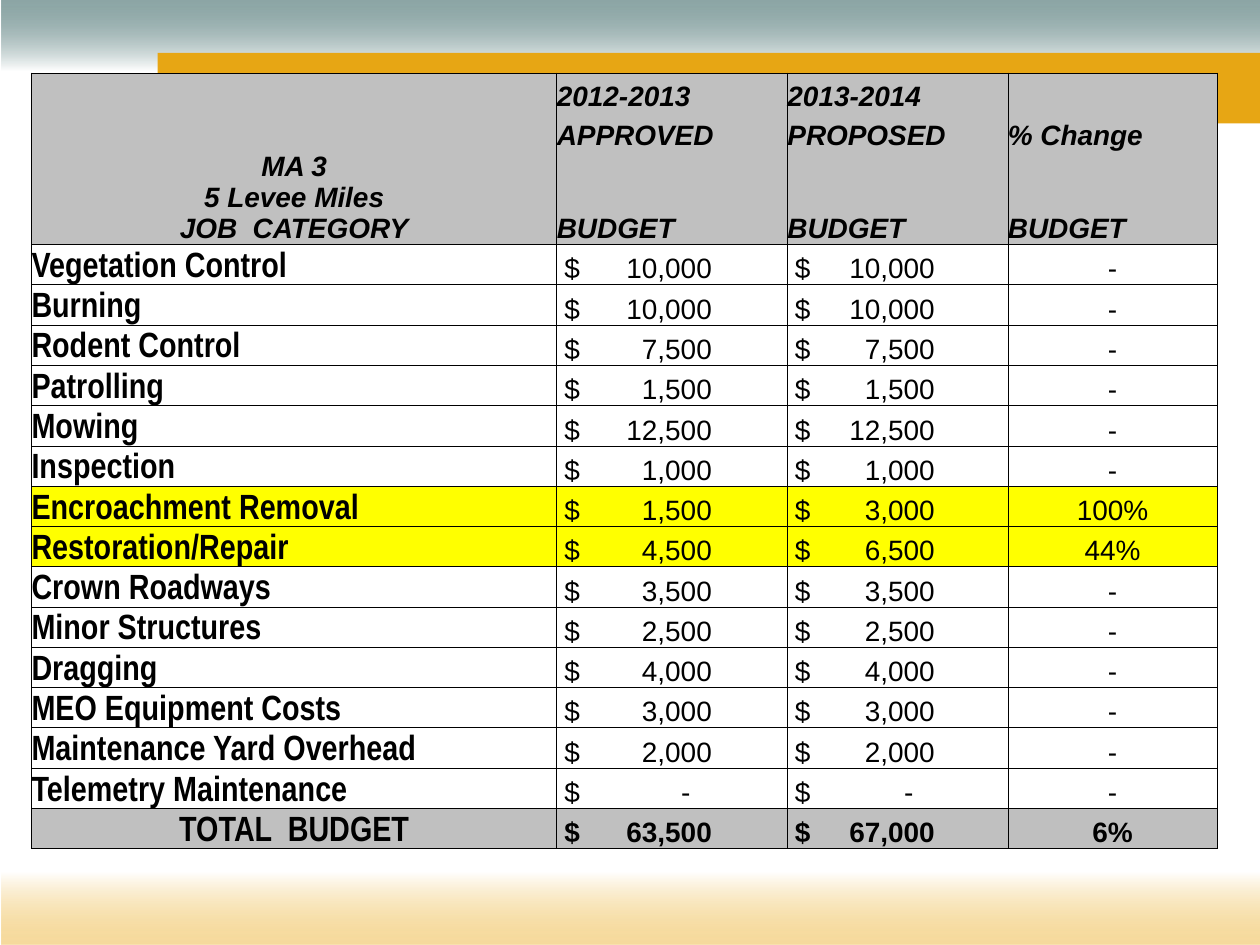
from dataclasses import dataclass

from lxml import etree
from pptx import Presentation
from pptx.dml.color import RGBColor
from pptx.enum.shapes import MSO_SHAPE
from pptx.enum.text import MSO_ANCHOR, PP_ALIGN
from pptx.oxml.ns import qn
from pptx.util import Inches, Pt

RECT = MSO_SHAPE.RECTANGLE
LEFT, CENTER = PP_ALIGN.LEFT, PP_ALIGN.CENTER
BOTTOM = MSO_ANCHOR.BOTTOM


@dataclass(frozen=True)
class Theme:
    teal: str = "215352"
    gold: str = "EEB840"
    orange: str = "E7A614"
    white: str = "FFFFFF"
    black: str = "000000"
    gray: str = "C0C0C0"
    total_gray: str = "BFBFBF"
    yellow: str = "FFFF00"
    font: str = "Arial"
    narrow: str = "Arial Narrow"
    body: int = 16
    label: int = 20
    border: float = 0.5


THEME = Theme()
NO_GRID_STYLE = "{2D5ABB26-0587-4C30-8999-92F81FD0307C}"
COL_WIDTHS = (4.17, 1.83, 1.75, 1.66)
HEADER_HEIGHTS = (0.31, 0.31, 0.74)
ROW_HEIGHT = 0.32
MONEY_INSET = 0.06
AMOUNT_TABS = (1.17, 1.11)
DASH_SHIFT = 0.17

TITLE = ("MA 3", "5 Levee Miles", "JOB  CATEGORY")
HEADERS = (
    ("2012-2013", "2013-2014", ""),
    ("APPROVED", "PROPOSED", "% Change"),
    ("BUDGET", "BUDGET", "BUDGET"),
)
BUDGET = (
    ("Vegetation Control", "10,000", "10,000", "-"),
    ("Burning", "10,000", "10,000", "-"),
    ("Rodent Control", "7,500", "7,500", "-"),
    ("Patrolling", "1,500", "1,500", "-"),
    ("Mowing", "12,500", "12,500", "-"),
    ("Inspection", "1,000", "1,000", "-"),
    ("Encroachment Removal", "1,500", "3,000", "100%"),
    ("Restoration/Repair", "4,500", "6,500", "44%"),
    ("Crown Roadways", "3,500", "3,500", "-"),
    ("Minor Structures", "2,500", "2,500", "-"),
    ("Dragging", "4,000", "4,000", "-"),
    ("MEO Equipment Costs", "3,000", "3,000", "-"),
    ("Maintenance Yard Overhead", "2,000", "2,000", "-"),
    ("Telemetry Maintenance", "-", "-", "-"),
)
TOTAL = ("TOTAL  BUDGET", "63,500", "67,000", "6%")


def add_band(slide, box, color):
    sp = slide.shapes.add_shape(RECT, *(Inches(v) for v in box))
    sp.shadow.inherit = False
    sp.line.fill.background()
    sp.fill.solid()
    sp.fill.fore_color.rgb = RGBColor.from_string(color)
    return sp


def add_fading_band(slide, box, color, angle):
    """Band that fades from a half-transparent colour to white."""
    sp = add_band(slide, box, color)
    sp.fill.gradient()
    sp.fill.gradient_angle = angle
    stops = ((0, color), (0.52, THEME.white))
    for stop, (position, rgb) in zip(sp.fill.gradient_stops, stops):
        stop.color.rgb = RGBColor.from_string(rgb)
        stop.position = position
    first_color = next(sp._element.iter(qn("a:srgbClr")))
    etree.SubElement(first_color, qn("a:alpha"), val="51000")


def set_text(tf, *lines, size=THEME.body, font=THEME.font, bold=False,
             italic=False, align=LEFT, tab=None):
    for i, line in enumerate(lines):
        p = tf.add_paragraph() if i else tf.paragraphs[0]
        p.alignment = align
        if tab is not None:
            tabs = etree.SubElement(p._p.get_or_add_pPr(), qn("a:tabLst"))
            etree.SubElement(tabs, qn("a:tab"), pos=str(Inches(tab)), algn="r")
        r = p.add_run()
        r.text = line
        r.font.size, r.font.name = Pt(size), font
        r.font.bold, r.font.italic = bold, italic
        r.font.color.rgb = RGBColor.from_string(THEME.black)


def style_cell(cell, fill=None, edges="LRTB"):
    """Set margins, anchor, the borders named in edges, and the fill."""
    cell.margin_left = cell.margin_right = 0
    cell.margin_top = cell.margin_bottom = 0
    cell.vertical_anchor = BOTTOM
    tc_pr = cell._tc.get_or_add_tcPr()
    for edge in "LRTB":
        ln = etree.SubElement(tc_pr, qn(f"a:ln{edge}"), w=str(Pt(THEME.border)))
        if edge in edges:
            solid = etree.SubElement(ln, qn("a:solidFill"))
            etree.SubElement(solid, qn("a:srgbClr"), val=THEME.black)
        else:
            etree.SubElement(ln, qn("a:noFill"))
    if fill:
        cell.fill.solid()
        cell.fill.fore_color.rgb = RGBColor.from_string(fill)
    else:
        cell.fill.background()


def fill_header(table):
    last = len(HEADERS) - 1
    for i, labels in enumerate(HEADERS):
        edges = "LR" + ("T" if i == 0 else "") + ("B" if i == last else "")
        style_cell(table.cell(i, 0), THEME.gray)
        for j, label in enumerate(labels, 1):
            cell = table.cell(i, j)
            style_cell(cell, THEME.gray, edges)
            if label:
                set_text(cell.text_frame, label, bold=True, italic=True)
    title = table.cell(0, 0)
    title.merge(table.cell(last, 0))
    set_text(title.text_frame, *TITLE, bold=True, italic=True, align=CENTER)


def fill_budget_row(table, i, values, fill=None, change_fill=None, total=False):
    name, *amounts, change = values
    cells = [table.cell(i, j) for j in range(len(values))]
    for cell in cells[:-1]:
        style_cell(cell, fill)
    style_cell(cells[-1], change_fill or fill)
    set_text(cells[0].text_frame, name, size=THEME.label, font=THEME.narrow,
             bold=True, align=CENTER if total else LEFT)
    for cell, amount, tab in zip(cells[1:], amounts, AMOUNT_TABS):
        cell.margin_left = Inches(MONEY_INSET)
        set_text(cell.text_frame, f"$\t{amount}", bold=total,
                 tab=tab - DASH_SHIFT if amount == "-" else tab)
    set_text(cells[-1].text_frame, change, bold=total, align=CENTER)


def add_budget_table(slide, left, top):
    heights = HEADER_HEIGHTS + (ROW_HEIGHT,) * (len(BUDGET) + 1)
    frame = slide.shapes.add_table(
        len(heights), len(COL_WIDTHS), Inches(left), Inches(top),
        Inches(sum(COL_WIDTHS)), Inches(sum(heights)))
    table = frame.table
    table.first_row = table.horz_banding = False
    table._tbl.tblPr.find(qn("a:tableStyleId")).text = NO_GRID_STYLE
    for column, width in zip(table.columns, COL_WIDTHS):
        column.width = Inches(width)
    for row, height in zip(table.rows, heights):
        row.height = Inches(height)
    fill_header(table)
    for i, values in enumerate(BUDGET, len(HEADERS)):
        fill_budget_row(table, i, values,
                        fill=None if values[-1] == "-" else THEME.yellow)
    fill_budget_row(table, len(heights) - 1, TOTAL, fill=THEME.gray,
                    change_fill=THEME.total_gray, total=True)


def add_background(slide):
    add_fading_band(slide, (0.01, 0, 9.99, 1.09), THEME.teal, angle=270)
    add_band(slide, (1.25, 0.42, 8.75, 0.56), THEME.orange)
    add_fading_band(slide, (0.01, 6.39, 9.99, 1.11), THEME.gold, angle=90)


def main():
    prs = Presentation()
    prs.slide_width, prs.slide_height = Inches(10), Inches(7.5)
    slide = prs.slides.add_slide(prs.slide_layouts[6])
    add_background(slide)
    add_budget_table(slide, 0.25, 0.58)
    prs.save("out.pptx")


if __name__ == "__main__":
    main()
